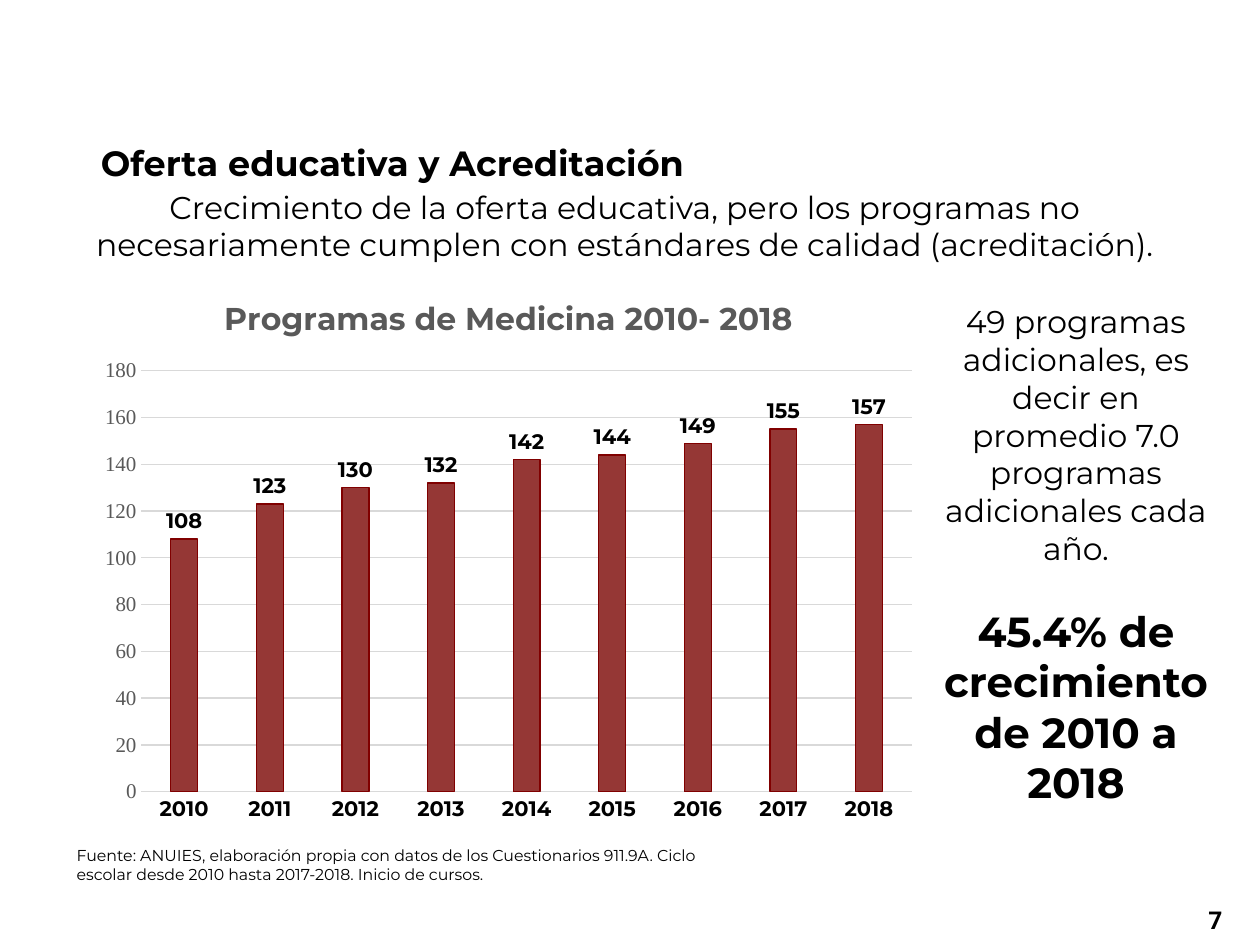
from pptx import Presentation
from pptx.chart.data import CategoryChartData
from pptx.dml.color import RGBColor
from pptx.enum.chart import XL_CHART_TYPE, XL_LABEL_POSITION, XL_TICK_MARK
from pptx.enum.text import MSO_ANCHOR, MSO_AUTO_SIZE, PP_ALIGN
from pptx.util import Inches, Pt

COLUMNS = XL_CHART_TYPE.COLUMN_CLUSTERED
OUTSIDE = XL_LABEL_POSITION.OUTSIDE_END
NO_TICK = XL_TICK_MARK.NONE
TOP = MSO_ANCHOR.TOP
FIXED = MSO_AUTO_SIZE.NONE
LEFT, CENTER, RIGHT = PP_ALIGN.LEFT, PP_ALIGN.CENTER, PP_ALIGN.RIGHT

GRID_UNIT = Inches(0.1)
BLACK, GRAY, PALE = "000000", "595959", "D9D9D9"
BAR, BAR_EDGE = "953735", "800000"
MAIN_FONT, AXIS_FONT, NUMBER_FONT = "Montserrat", "Times New Roman", "Roboto"

FIRST_YEAR = 2010
PROGRAMS = [108, 123, 130, 132, 142, 144, 149, 155, 157]


def color(value):
    """Turn a hex string into a colour."""
    return RGBColor.from_string(value)


def cells(*lengths):
    """Turn columns and rows of the grid into lengths."""
    return [round(length * GRID_UNIT) for length in lengths]


def style_font(font, size, name=MAIN_FONT, ink=BLACK, bold=False):
    """Set the typeface, size, colour and weight of a font."""
    font.name, font.size, font.bold = name, Pt(size), bold
    font.color.rgb = color(ink)


def style_line(line, ink):
    """Give a chart part a thin solid line."""
    line.color.rgb = color(ink)
    line.width = Pt(0.75)


def write(para, text, align=LEFT, before=0, **style):
    """Write formatted text into a paragraph."""
    para.alignment = align
    if before:
        para.space_before = Pt(before)
    span = para.add_run()
    span.text = text
    style_font(span.font, **style)


def add_text(page, area, text, **style):
    """Add a wrapping text box and return its frame."""
    frame = page.shapes.add_textbox(*cells(*area)).text_frame
    frame.word_wrap = True
    write(frame.paragraphs[0], text, **style)
    return frame


def fill_title(page, area, text):
    """Place and write the slide title."""
    title = page.shapes.title
    title.left, title.top, title.width, title.height = cells(*area)
    frame = title.text_frame
    frame.word_wrap, frame.auto_size = False, FIXED
    frame.vertical_anchor = TOP
    write(frame.paragraphs[0], text, size=20, bold=True)


def style_axes(chart):
    """Format the year axis and the value axis."""
    years, values = chart.category_axis, chart.value_axis
    for axis in (years, values):
        axis.major_tick_mark = axis.minor_tick_mark = NO_TICK
    style_font(years.tick_labels.font, 12, bold=True)
    style_line(years.format.line, PALE)
    style_font(values.tick_labels.font, 12, AXIS_FONT, GRAY)
    values.format.line.fill.background()
    values.minimum_scale, values.maximum_scale = 0, 180
    values.major_unit = 20
    style_line(values.major_gridlines.format.line, PALE)


def style_bars(plot):
    """Format the columns and their value labels."""
    plot.gap_width, plot.overlap = 219, -27
    plot.vary_by_categories = False
    bars = plot.series[0].format
    bars.fill.solid()
    bars.fill.fore_color.rgb = color(BAR)
    style_line(bars.line, BAR_EDGE)
    plot.has_data_labels = True
    labels = plot.data_labels
    labels.show_value, labels.position = True, OUTSIDE
    style_font(labels.font, 12, bold=True)


def add_program_chart(page, area):
    """Add the column chart of programs per year."""
    data = CategoryChartData()
    data.categories = [str(FIRST_YEAR + step) for step in range(len(PROGRAMS))]
    data.add_series("Programas", PROGRAMS)
    chart = page.shapes.add_chart(COLUMNS, *cells(*area), data).chart
    style_font(chart.font, 10, AXIS_FONT)
    chart.has_legend = False
    chart.has_title = True
    write(chart.chart_title.text_frame.paragraphs[0],
          "Programas de Medicina 2010- 2018",
          align=CENTER, size=18, ink=GRAY, bold=True)
    style_axes(chart)
    style_bars(chart.plots[0])


def main():
    """Build and save the slide."""
    deck = Presentation()
    deck.slide_width, deck.slide_height = cells(100, 75)
    page = deck.slides.add_slide(deck.slide_layouts[5])
    fill_title(page, (7, 10.7, 48.8, 4.4), "Oferta educativa y Acreditación")
    add_text(page, (4.3, 14.4, 90.6, 7.1),
             "Crecimiento de la oferta educativa, pero los programas no "
             "necesariamente cumplen con estándares de calidad (acreditación).",
             align=CENTER, size=18)
    add_program_chart(page, (7, 21.7, 66.7, 44.4))
    growth = add_text(page, (73.6, 23.5, 23.6, 41.4),
                      "49 programas adicionales, es decir en promedio 7.0 "
                      "programas adicionales cada año.",
                      align=CENTER, size=18)
    write(growth.add_paragraph(), "45.4% de crecimiento de 2010 a 2018",
          align=CENTER, before=22, size=24, bold=True)
    add_text(page, (5.1, 66.6, 55.1, 4),
             "Fuente: ANUIES, elaboración propia con datos de los Cuestionarios "
             "911.9A. Ciclo escolar desde 2010 hasta 2017-2018. Inicio de cursos.",
             size=9)
    add_text(page, (74.7, 71.3, 23.3, 4), "7",
             align=RIGHT, size=14, name=NUMBER_FONT, bold=True)
    deck.save("out.pptx")


if __name__ == "__main__":
    main()
